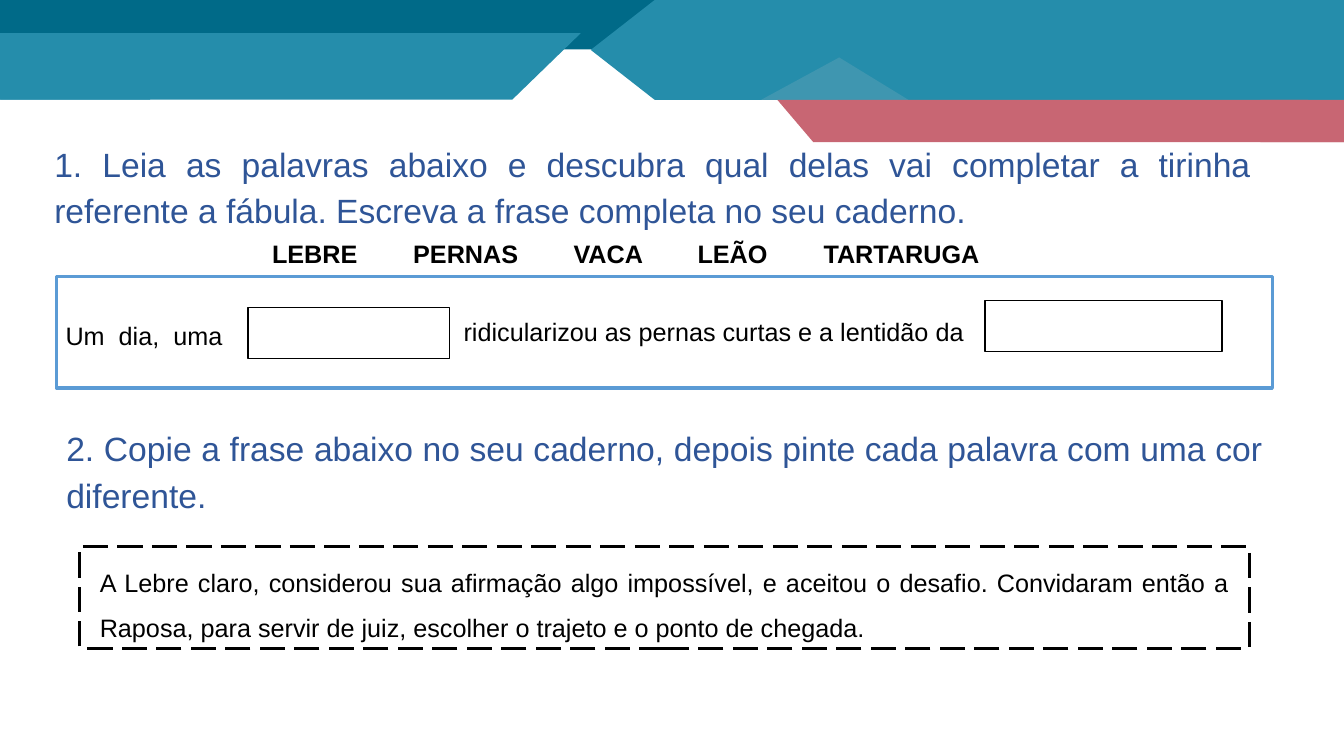
import pptx
import pptx.util
import pptx.dml.color
import pptx.enum.dml
import pptx.enum.shapes
import pptx.enum.text
import lxml.etree

PX = 9144
SHAPE = pptx.enum.shapes.MSO_SHAPE
ALIGN = pptx.enum.text.PP_ALIGN
ANCHOR = pptx.enum.text.MSO_ANCHOR
A = "{http://schemas.openxmlformats.org/drawingml/2006/main}"
COLORS = {
    "dark": "006A88",
    "teal": "258DAB",
    "light": "3F96B0",
    "rose": "C86673",
    "heading": "2F5597",
    "frame": "5B9BD5",
    "black": "000000",
    "white": "FFFFFF",
}


def px(n):
    return pptx.util.Emu(n * PX)


def rgb(name):
    return pptx.dml.color.RGBColor.from_string(COLORS[name])


def add_block(s, kind, box, fill=None, line=None, width=1, adj=None, flip=False):
    sp = s.shapes.add_shape(kind, *map(px, box))
    sp.shadow.inherit = False
    if adj is not None:
        sp.adjustments[0] = adj
    if flip:
        sp._element.spPr.find(A + "xfrm").set("flipH", "1")
    if fill:
        sp.fill.solid()
        sp.fill.fore_color.rgb = rgb(fill)
    else:
        sp.fill.background()
    if line:
        sp.line.color.rgb = rgb(line)
        sp.line.width = pptx.util.Pt(width)
    else:
        sp.line.fill.background()
    return sp


def write_text(sp, text, size=18, color="black", bold=False, align=ALIGN.LEFT,
               spacing=1.0, inset=10, anchor=ANCHOR.TOP, tabs=(), wrap=True):
    tf = sp.text_frame
    tf.word_wrap = wrap
    tf.vertical_anchor = anchor
    tf.margin_left = px(inset)
    tf.margin_right = px(inset)
    tf.margin_top = tf.margin_bottom = px(5)
    p = tf.paragraphs[0]
    p.alignment = align
    p.line_spacing = spacing
    if tabs:
        tab_list = lxml.etree.SubElement(p._p.get_or_add_pPr(), A + "tabLst")
        for pos in tabs:
            lxml.etree.SubElement(tab_list, A + "tab", pos=str(px(pos)), algn="l")
    r = p.add_run()
    r.text = text
    r.font.name = "Arial"
    r.font.size = pptx.util.Pt(size)
    r.font.bold = bold
    r.font.color.rgb = rgb(color)


def add_text(s, box, text, **style):
    write_text(s.shapes.add_textbox(*map(px, box)), text, **style)


def add_question(s, box, text):
    add_text(s, box, text, size=24, color="heading", align=ALIGN.JUSTIFY, spacing=1.15)


def add_banner(s):
    for color, top, right, height in (("dark", 0, 720, 49), ("teal", 33, 576, 66)):
        add_block(s, SHAPE.PARALLELOGRAM, (0, top, right, height), color, adj=1.03)
        add_block(s, SHAPE.RECTANGLE, (0, top, 149, height), color)
    add_block(s, SHAPE.PENTAGON, (586, 0, 747, 99), "teal", adj=0.64, flip=True)
    add_block(s, SHAPE.ISOSCELES_TRIANGLE, (755, 57, 146, 42), "light", adj=0.53)
    add_block(s, SHAPE.PARALLELOGRAM, (771, 99, 562, 42), "rose", adj=0.85, flip=True)
    add_block(s, SHAPE.RECTANGLE, (1250, 99, 83, 42), "rose")


def add_fill_in(s):
    add_text(s, (260, 232, 750, 40),
             "\t".join(("LEBRE", "PERNAS", "VACA", "LEÃO", "TARTARUGA")),
             bold=True, tabs=(140, 299, 422, 547))
    add_text(s, (44, 298, 202, 51), "Um  dia,  uma", spacing=1.5, inset=21)
    add_text(s, (450, 309, 527, 40),
             "ridicularizou as pernas curtas e a lentidão da", wrap=False)
    for blank in ((246, 305, 200, 51), (977, 298, 235, 51)):
        add_block(s, SHAPE.RECTANGLE, blank, "white", "black")
    add_block(s, SHAPE.RECTANGLE, (56, 274, 1206, 111), line="frame", width=2.25)


def add_sentence(s):
    sp = add_block(s, SHAPE.RECTANGLE, (79, 542, 1160, 101), line="black", width=2.25)
    sp.line.dash_style = pptx.enum.dml.MSO_LINE.LONG_DASH
    write_text(sp, "A Lebre claro, considerou sua afirmação algo impossível, e aceitou o "
               "desafio. Convidaram então a Raposa, para servir de juiz, escolher o "
               "trajeto e o ponto de chegada.",
               align=ALIGN.JUSTIFY, spacing=1.5, inset=20, anchor=ANCHOR.MIDDLE)


def main():
    prs = pptx.Presentation()
    prs.slide_width, prs.slide_height = px(1333), px(750)
    s = prs.slides.add_slide(prs.slide_layouts[6])
    add_banner(s)
    add_question(s, (44, 132, 1206, 103),
                 "1. Leia as palavras abaixo e descubra qual delas vai completar a "
                 "tirinha referente a fábula. Escreva a frase completa no seu caderno.")
    add_fill_in(s)
    add_question(s, (56, 414, 1206, 100),
                 "2. Copie a frase abaixo no seu caderno, depois pinte cada palavra "
                 "com uma cor diferente.")
    add_sentence(s)
    prs.save("out.pptx")


if __name__ == "__main__":
    main()
